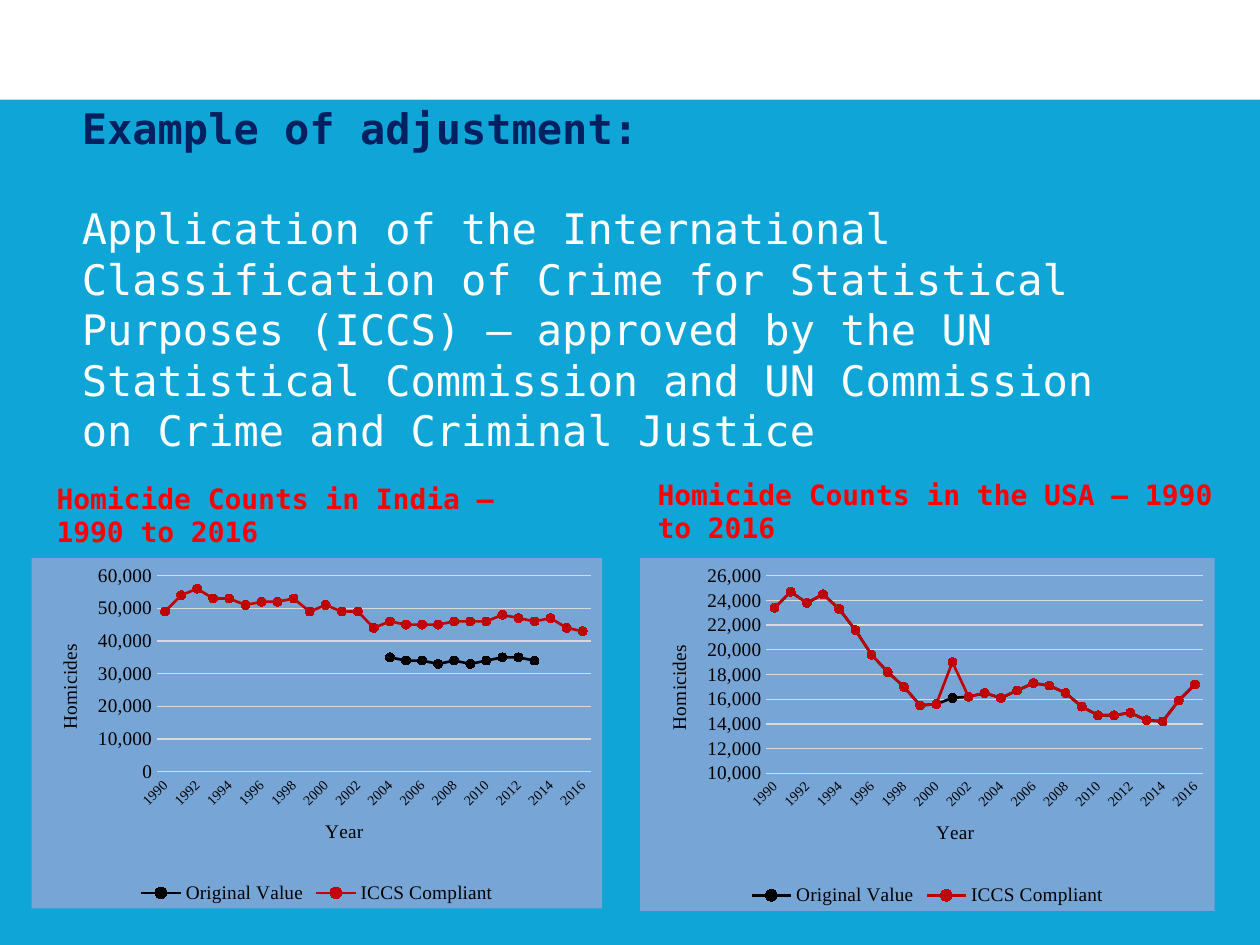
from lxml.etree import SubElement
from pptx import Presentation
from pptx.chart.data import CategoryChartData
from pptx.dml.color import RGBColor
from pptx.enum.chart import XL_CHART_TYPE, XL_LEGEND_POSITION, XL_MARKER_STYLE, XL_TICK_MARK
from pptx.enum.shapes import MSO_SHAPE
from pptx.enum.text import MSO_ANCHOR, MSO_AUTO_SIZE, PP_ALIGN
from pptx.oxml import parse_xml
from pptx.oxml.ns import nsdecls, qn
from pptx.util import Inches, Pt

MONO, SERIF = "DejaVu Sans Mono", "Times New Roman"
YEARS = [str(year) for year in range(1990, 2017)]
INDIA_ORIGINAL = [None] * 14 + [
    35000, 34000, 34000, 33000, 34000, 33000, 34000, 35000, 35000, 34000] + [None] * 3
INDIA_ICCS = [
    49000, 54000, 56000, 53000, 53000, 51000, 52000, 52000, 53000,
    49000, 51000, 49000, 49000, 44000, 46000, 45000, 45000, 45000,
    46000, 46000, 46000, 48000, 47000, 46000, 47000, 44000, 43000]
USA_ORIGINAL = [
    23400, 24700, 23800, 24500, 23300, 21600, 19600, 18200, 17000,
    15500, 15600, 16100, 16200, 16500, 16100, 16700, 17300, 17100,
    16500, 15400, 14700, 14700, 14900, 14300, 14200, 15900, 17200]
USA_ICCS = [19000 if year == "2001" else value for year, value in zip(YEARS, USA_ORIGINAL)]


def rgb(color):
    """Turn a hex string into a colour."""
    return RGBColor.from_string(color)


def set_font(font, name, size, color, bold=False):
    """Set the face, size, colour and weight of a font."""
    font.name, font.size, font.bold = name, Pt(size), bold
    font.color.rgb = rgb(color)


def set_line(line, color, width):
    """Give a line its colour and width."""
    line.color.rgb = rgb(color)
    line.width = Pt(width)


def write_text(sp, box, text, size, color, bold=False):
    """Place a text shape and write one left-aligned paragraph in it."""
    sp.left, sp.top, sp.width, sp.height = map(Inches, box)
    tf = sp.text_frame
    tf.text = text
    tf.word_wrap = True
    tf.auto_size = MSO_AUTO_SIZE.NONE
    tf.vertical_anchor = MSO_ANCHOR.TOP
    p = tf.paragraphs[0]
    p.alignment = PP_ALIGN.LEFT
    p.space_before = Pt(0)
    set_font(p.font, MONO, size, color, bold)
    return p


def remove_bullet(p):
    """Drop the bullet and the hanging indent of a paragraph."""
    pPr = p._p.get_or_add_pPr()
    pPr.set("marL", "0")
    pPr.set("indent", "0")
    pPr.insert_element_before(parse_xml(f"<a:buNone {nsdecls('a')}/>"), "a:tabLst", "a:defRPr")


def add_band(s):
    """Add the white band at the top."""
    sp = s.shapes.add_shape(MSO_SHAPE.RECTANGLE, 0, 0, Inches(10), Inches(0.79))
    sp.shadow.inherit = False
    sp.fill.solid()
    sp.fill.fore_color.rgb = rgb("FFFFFF")
    sp.line.fill.background()


def add_caption(s, box, text):
    """Add the red caption above a chart."""
    sp = s.shapes.add_textbox(*map(Inches, box))
    write_text(sp, box, text, 16, "FF0000", bold=True)


def style_axis(axis, title, size):
    """Give an axis its title and label font, without tick marks."""
    axis.major_tick_mark = axis.minor_tick_mark = XL_TICK_MARK.NONE
    set_font(axis.tick_labels.font, SERIF, size, "000000")
    tf = axis.axis_title.text_frame
    tf.text = title
    set_font(tf.paragraphs[0].font, SERIF, 11, "000000")


def fill_chart(chart, color):
    """Fill the chart area with one colour and no border."""
    chart._chartSpace.find(qn("c:chart")).addnext(parse_xml(
        f'<c:spPr {nsdecls("c", "a")}><a:solidFill><a:srgbClr val="{color}"/></a:solidFill>'
        "<a:ln><a:noFill/></a:ln></c:spPr>"))


def place_plot(chart, x, y, w, h):
    """Fix the inner plot area as fractions of the chart."""
    plot_area = chart._chartSpace.chart.plotArea
    for old in plot_area.findall(qn("c:layout")):
        plot_area.remove(old)
    layout = parse_xml(f"<c:layout {nsdecls('c')}/>")
    manual = SubElement(layout, qn("c:manualLayout"))
    values = {"layoutTarget": "inner", "xMode": "edge", "yMode": "edge",
              "x": x, "y": y, "w": w, "h": h}
    for tag, value in values.items():
        SubElement(manual, qn(f"c:{tag}")).set("val", str(value))
    plot_area.insert(0, layout)


def add_homicide_chart(s, box, original, iccs, minimum=None):
    """Add a line chart of original and ICCS compliant counts."""
    data = CategoryChartData(number_format="#,##0")
    data.categories = YEARS
    data.add_series("Original Value", original)
    data.add_series("ICCS Compliant", iccs)
    chart = s.shapes.add_chart(XL_CHART_TYPE.LINE_MARKERS, *map(Inches, box), data).chart
    set_font(chart.font, SERIF, 11, "000000")
    chart.has_title = False
    chart.has_legend = True
    chart.legend.position = XL_LEGEND_POSITION.BOTTOM
    chart.legend.include_in_layout = False
    set_font(chart.legend.font, SERIF, 11, "000000")
    chart.plots[0].vary_by_categories = False
    for series, color in zip(chart.plots[0].series, ("000000", "C00000")):
        series.smooth = False
        set_line(series.format.line, color, 1.5)
        marker = series.marker
        marker.style, marker.size = XL_MARKER_STYLE.CIRCLE, 5
        marker.format.fill.solid()
        marker.format.fill.fore_color.rgb = rgb(color)
        set_line(marker.format.line, color, 0.75)

    years, counts = chart.category_axis, chart.value_axis
    style_axis(years, "Year", 8)
    set_line(years.format.line, "D9D9D9", 0.75)
    years._element.find(qn("c:txPr")).find(qn("a:bodyPr")).set("rot", "-2700000")
    style_axis(counts, "Homicides", 11)
    counts.format.line.fill.background()
    set_line(counts.major_gridlines.format.line, "D9D9D9", 0.75)
    counts.tick_labels.number_format = "#,##0"
    counts.tick_labels.number_format_is_linked = False
    if minimum is not None:
        counts.minimum_scale = minimum
    fill_chart(chart, "77A5D5")
    place_plot(chart, 0.22, 0.05, 0.76, 0.56)


def main():
    """Build the slide and save it."""
    prs = Presentation()
    prs.slide_width, prs.slide_height = Inches(10), Inches(7.5)
    s = prs.slides.add_slide(prs.slide_layouts[1])
    s.background.fill.solid()
    s.background.fill.fore_color.rgb = rgb("0FA6D7")
    add_band(s)
    write_text(s.shapes.title, (0.55, 0.76, 8.66, 0.5), "Example of adjustment:",
               24, "002060", bold=True)
    p = write_text(
        s.placeholders[1], (0.55, 1.56, 8.66, 2.14),
        "Application of the International Classification of Crime for Statistical Purposes "
        "(ICCS) – approved by the UN Statistical Commission and UN Commission on Crime "
        "and Criminal Justice", 24, "FFFFFF")
    remove_bullet(p)
    add_homicide_chart(s, (0.25, 4.43, 4.53, 2.78), INDIA_ORIGINAL, INDIA_ICCS)
    add_caption(s, (0.35, 3.77, 4.09, 0.67), "Homicide Counts in India – 1990 to 2016")
    add_homicide_chart(s, (5.08, 4.43, 4.56, 2.8), USA_ORIGINAL, USA_ICCS, minimum=10000)
    add_caption(s, (5.12, 3.74, 4.61, 0.67), "Homicide Counts in the USA – 1990 to 2016")
    prs.save("out.pptx")


if __name__ == "__main__":
    main()
